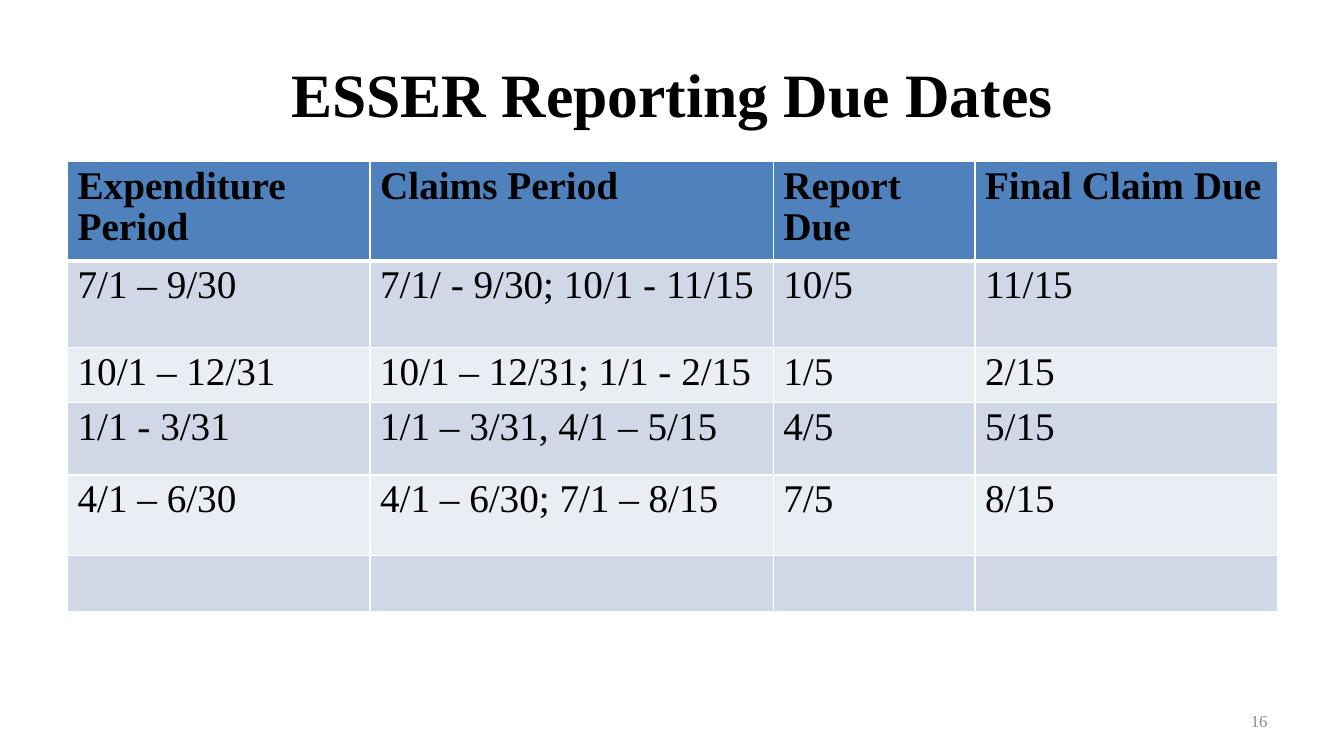
from lxml import etree
from pptx import Presentation
from pptx.dml.color import RGBColor
from pptx.enum.text import MSO_ANCHOR, PP_ALIGN
from pptx.oxml.ns import qn
from pptx.util import Inches, Pt

TITLE = "ESSER Reporting Due Dates"
PAGE_NUMBER = "16"
HEADER = ("Expenditure Period", "Claims Period", "Report Due", "Final Claim Due")
PERIODS = [
    ("7/1 – 9/30", "7/1/ - 9/30; 10/1 - 11/15", "10/5", "11/15"),
    ("10/1 – 12/31", "10/1 – 12/31; 1/1 - 2/15", "1/5", "2/15"),
    ("1/1 - 3/31", "1/1 – 3/31, 4/1 – 5/15", "4/5", "5/15"),
    ("4/1 – 6/30", "4/1 – 6/30; 7/1 – 8/15", "7/5", "8/15"),
    ("", "", "", ""),
]
COLUMN_WIDTHS = (3, 4, 2, 3)
ROW_HEIGHTS = (0.4, 0.86, 0.42, 0.72, 0.8, 0.56)  # minimums; rows grow with their text

WIDTH, HEIGHT, MARGIN = 13.33, 7.5, 0.67
COLORS = {"text": "000000", "number": "8C8C8C", "header": "4F81BD",
          "odd": "D0D8E8", "even": "E9EDF4", "border": "FFFFFF"}
FONT = "Times New Roman"
MIDDLE = MSO_ANCHOR.MIDDLE
CENTER, LEFT, RIGHT = PP_ALIGN.CENTER, PP_ALIGN.LEFT, PP_ALIGN.RIGHT


def write(frame, text, size, color="text", bold=False, align=LEFT):
    para = frame.paragraphs[0]
    para.alignment = align
    span = para.add_run()
    span.text = text
    span.font.name = FONT
    span.font.size = Pt(size)
    span.font.bold = bold
    span.font.color.rgb = RGBColor.from_string(COLORS[color])
    return para


def add_text(page, area, *args, **style):
    box = page.shapes.add_textbox(*map(Inches, area))
    box.text_frame.word_wrap = True
    box.text_frame.vertical_anchor = MIDDLE
    write(box.text_frame, *args, **style)


def set_borders(cell, top, bottom):
    """Draw the cell's four edges; the schema wants them ahead of the fill."""
    properties = cell._tc.get_or_add_tcPr()
    edges = (("a:lnL", 1), ("a:lnR", 1), ("a:lnT", top), ("a:lnB", bottom))
    for index, (tag, points) in enumerate(edges):
        line = etree.Element(qn(tag), w=str(Pt(points)))
        fill = etree.SubElement(line, qn("a:solidFill"))
        etree.SubElement(fill, qn("a:srgbClr"), val=COLORS["border"])
        properties.insert(index, line)


def add_schedule(page):
    rows = [HEADER] + PERIODS
    area = (MARGIN, 1.6, sum(COLUMN_WIDTHS), sum(ROW_HEIGHTS))
    table = page.shapes.add_table(len(rows), len(HEADER), *map(Inches, area)).table
    for column, width in zip(table.columns, COLUMN_WIDTHS):
        column.width = Inches(width)
    for r, (values, height) in enumerate(zip(rows, ROW_HEIGHTS)):
        table.rows[r].height = Inches(height)
        band = "header" if r == 0 else "odd" if r % 2 else "even"
        for c, value in enumerate(values):
            cell = table.cell(r, c)
            cell.fill.solid()
            cell.fill.fore_color.rgb = RGBColor.from_string(COLORS[band])
            set_borders(cell, top=3 if r == 1 else 1, bottom=3 if r == 0 else 1)
            if value:
                para = write(cell.text_frame, value, 28, bold=r == 0)
                para.line_spacing = 0.95


def main():
    deck = Presentation()
    deck.slide_width, deck.slide_height = Inches(WIDTH), Inches(HEIGHT)
    page = deck.slides.add_slide(deck.slide_layouts[6])
    add_text(page, (MARGIN, 0.3, 12, 1.25), TITLE, 44, bold=True, align=CENTER)
    add_schedule(page)
    add_text(page, (9.56, 6.95, 3.11, 0.4), PAGE_NUMBER, 12, "number", align=RIGHT)
    deck.save("out.pptx")


if __name__ == "__main__":
    main()
